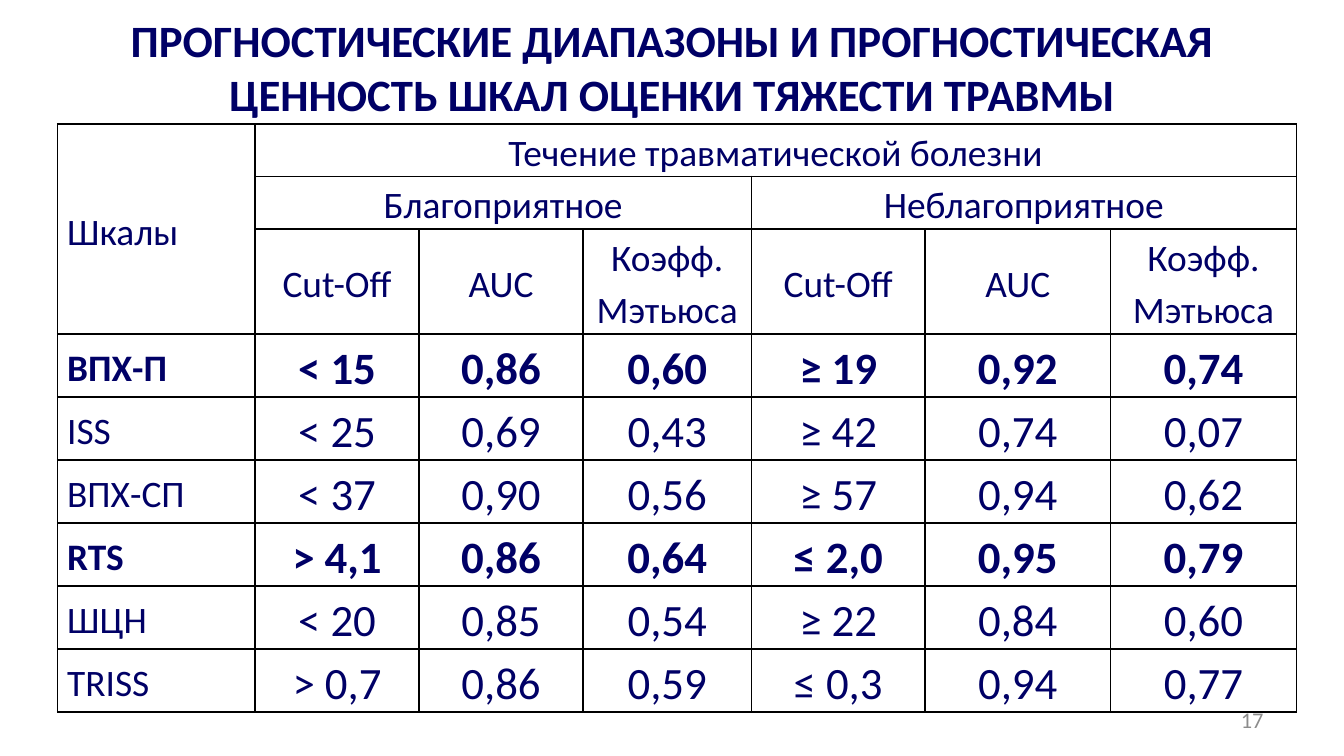
import pptx
import pptx.util
import pptx.dml.color
import pptx.enum.text
import pptx.oxml.ns
import lxml.etree

Cm = pptx.util.Cm
Pt = pptx.util.Pt
RGBColor = pptx.dml.color.RGBColor
Align = pptx.enum.text.PP_ALIGN
Anchor = pptx.enum.text.MSO_ANCHOR

NAVY = RGBColor(0x00, 0x00, 0x66)
GREY = RGBColor(0x8C, 0x8C, 0x8C)
WHITE = RGBColor(0xFF, 0xFF, 0xFF)
BLACK = RGBColor(0x00, 0x00, 0x00)
FONT = "Calibri"

TITLE = "ПРОГНОСТИЧЕСКИЕ ДИАПАЗОНЫ И ПРОГНОСТИЧЕСКАЯ ЦЕННОСТЬ ШКАЛ ОЦЕНКИ ТЯЖЕСТИ ТРАВМЫ"
PAGE_NUMBER = "17"
MEASURES = ["Cut-Off", "AUC", "Коэфф.\nМэтьюса"]
HEADER = [
    ["Шкалы", "Течение травматической болезни", "", "", "", "", ""],
    ["", "Благоприятное", "", "", "Неблагоприятное", "", ""],
    [""] + MEASURES * 2,
]
SCALES = [
    ["ВПХ-П", "< 15", "0,86", "0,60", "≥ 19", "0,92", "0,74"],
    ["ISS", "< 25", "0,69", "0,43", "≥ 42", "0,74", "0,07"],
    ["ВПХ-СП", "< 37", "0,90", "0,56", "≥ 57", "0,94", "0,62"],
    ["RTS", "> 4,1", "0,86", "0,64", "≤ 2,0", "0,95", "0,79"],
    ["ШЦН", "< 20", "0,85", "0,54", "≥ 22", "0,84", "0,60"],
    ["TRISS", "> 0,7", "0,86", "0,59", "≤ 0,3", "0,94", "0,77"],
]
BOLD_SCALES = {"ВПХ-П", "RTS"}
MERGES = [((0, 0), (2, 0)), ((0, 1), (0, 6)), ((1, 1), (1, 3)), ((1, 4), (1, 6))]
COLUMN_WIDTHS = [3.73, 3.1, 3.1, 3.18, 3.28, 3.51, 3.51]
ROW_HEIGHTS = [0.99, 0.99, 1.98] + [1.19] * len(SCALES)


def add_span(para, text, size, color, bold=False):
    span = para.add_run()
    span.text = text
    span.font.name = FONT
    span.font.size = Pt(size)
    span.font.bold = bold
    span.font.color.rgb = color


def add_label(page, place, text, size, color, align, bold=False):
    box = page.shapes.add_textbox(*[Cm(length) for length in place])
    frame = box.text_frame
    frame.word_wrap = True
    frame.vertical_anchor = Anchor.MIDDLE
    frame.margin_left = frame.margin_right = Cm(0.1)
    frame.margin_top = frame.margin_bottom = Cm(0.1)
    para = frame.paragraphs[0]
    para.alignment = align
    add_span(para, text, size, color, bold)
    return box


def add_borders(cell):
    properties = cell._tc.get_or_add_tcPr()
    for index, side in enumerate(["lnL", "lnR", "lnT", "lnB"]):
        line = lxml.etree.Element(pptx.oxml.ns.qn("a:" + side), w=str(Pt(1)))
        fill = lxml.etree.SubElement(line, pptx.oxml.ns.qn("a:solidFill"))
        lxml.etree.SubElement(fill, pptx.oxml.ns.qn("a:srgbClr"), val=str(BLACK))
        properties.insert(index, line)


def fill_cell(cell, text, size, align, bold):
    cell.fill.solid()
    cell.fill.fore_color.rgb = WHITE
    cell.vertical_anchor = Anchor.MIDDLE
    cell.margin_left = cell.margin_right = Cm(0.18)
    cell.margin_top = cell.margin_bottom = 0
    add_borders(cell)
    if not text:
        return
    frame = cell.text_frame
    for index, line in enumerate(text.split("\n")):
        para = frame.add_paragraph() if index else frame.paragraphs[0]
        para.alignment = align
        para.line_spacing = 1.15
        add_span(para, line, size, NAVY, bold)


def add_scale_table(page):
    rows = HEADER + SCALES
    table = page.shapes.add_table(
        len(rows), len(COLUMN_WIDTHS), Cm(1.09), Cm(2.34),
        Cm(sum(COLUMN_WIDTHS)), Cm(sum(ROW_HEIGHTS)),
    ).table
    table.first_row = table.horz_banding = False
    for column, width in zip(table.columns, COLUMN_WIDTHS):
        column.width = Cm(width)
    for row, height in zip(table.rows, ROW_HEIGHTS):
        row.height = Cm(height)
    for row_index, texts in enumerate(rows):
        is_scale = row_index >= len(HEADER)
        for column_index, text in enumerate(texts):
            size = 24 if is_scale and column_index else 20
            align = Align.CENTER if column_index else Align.LEFT
            cell = table.cell(row_index, column_index)
            fill_cell(cell, text, size, align, texts[0] in BOLD_SCALES)
    for first, last in MERGES:
        table.cell(*first).merge(table.cell(*last))


def main():
    deck = pptx.Presentation()
    deck.slide_width = Cm(25.4)
    deck.slide_height = Cm(14.29)
    page = deck.slides.add_slide(deck.slide_layouts[6])
    add_scale_table(page)
    add_label(page, (1.27, 0.15, 22.86, 2.21), TITLE, 24, NAVY, Align.CENTER, True)
    number = add_label(page, (18.21, 13.23, 5.92, 0.76), PAGE_NUMBER, 12, GREY, Align.RIGHT)
    number.text_frame.margin_right = Cm(0.25)
    deck.save("out.pptx")


if __name__ == "__main__":
    main()
